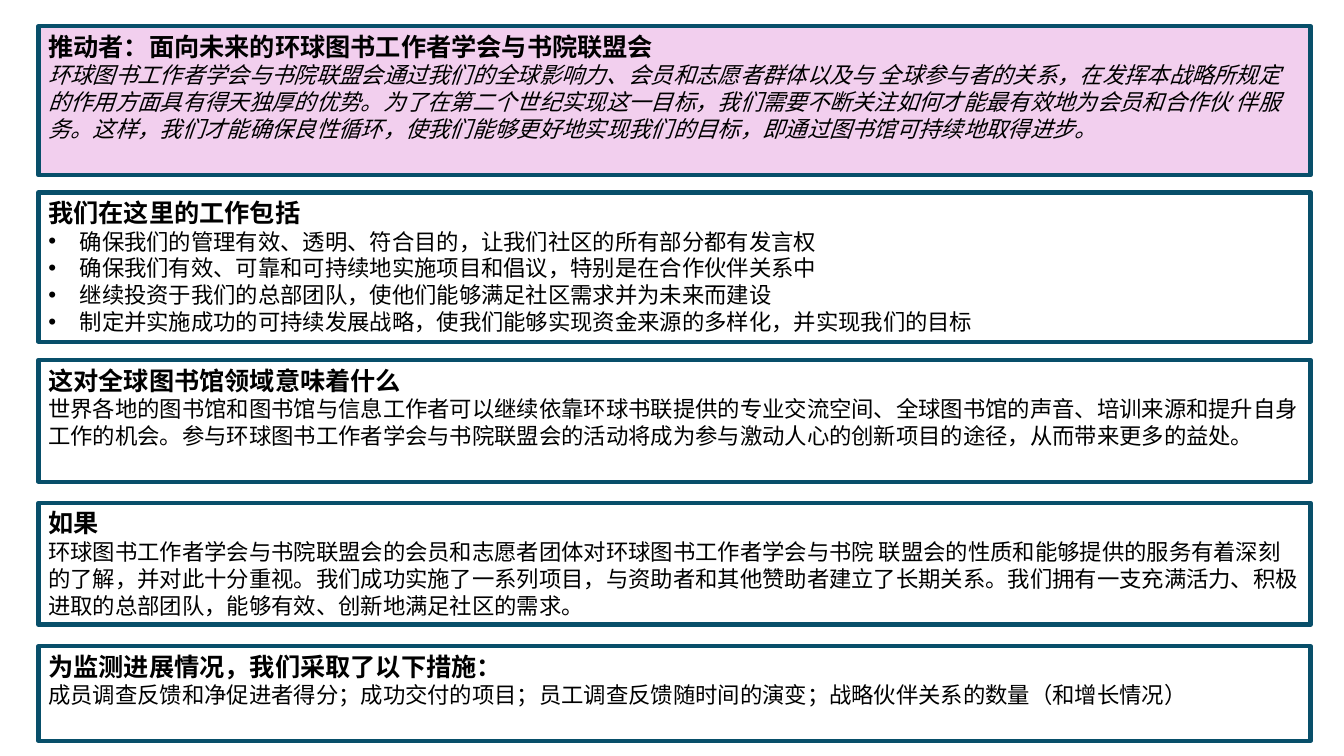
from lxml import etree
from pptx import Presentation
from pptx.dml.color import RGBColor
from pptx.enum import shapes, text
from pptx.oxml.ns import qn
from pptx.util import Cm, Pt

TEAL = RGBColor(0x08, 0x4F, 0x6A)
PINK = RGBColor(0xF2, 0xCF, 0xEE)
WHITE = RGBColor(0xFF, 0xFF, 0xFF)
BLACK = RGBColor(0x00, 0x00, 0x00)
FONT = "Roboto"
LEFT, WIDTH = Cm(0.97), Cm(32.06)
INDENT = Cm(0.79)

# top (cm), height (cm), fill, heading, body paragraphs, body format
PANELS = [
    (0.66, 3.76, PINK, "推动者：面向未来的环球图书工作者学会与书院联盟会", [
        "环球图书工作者学会与书院联盟会通过我们的全球影响力、会员和志愿者群体以及与 全球参与者的关系，"
        "在发挥本战略所规定的作用方面具有得天独厚的优势。为了在第二个世纪实现这一目标，"
        "我们需要不断关注如何才能最有效地为会员和合作伙 伴服务。这样，我们才能确保良性循环，"
        "使我们能够更好地实现我们的目标，即通过图书馆可持续地取得进步。",
    ], {"italic": True}),
    (4.85, 3.76, WHITE, "我们在这里的工作包括", [
        "确保我们的管理有效、透明、符合目的，让我们社区的所有部分都有发言权",
        "确保我们有效、可靠和可持续地实施项目和倡议，特别是在合作伙伴关系中",
        "继续投资于我们的总部团队，使他们能够满足社区需求并为未来而建设",
        "制定并实施成功的可持续发展战略，使我们能够实现资金来源的多样化，并实现我们的目标",
    ], {"bullet": True}),
    (9.07, 3.07, WHITE, "这对全球图书馆领域意味着什么", [
        "世界各地的图书馆和图书馆与信息工作者可以继续依靠环球书联提供的专业交流空间、"
        "全球图书馆的声音、培训来源和提升自身工作的机会。参与环球图书工作者学会与书院联盟会的活动"
        "将成为参与激动人心的创新项目的途径，从而带来更多的益处。",
    ], {}),
    (12.67, 3.07, WHITE, "如果", [
        "环球图书工作者学会与书院联盟会的会员和志愿者团体对环球图书工作者学会与书院 联盟会的性质"
        "和能够提供的服务有着深刻的了解，并对此十分重视。我们成功实施了一系列项目，"
        "与资助者和其他赞助者建立了长期关系。我们拥有一支充满活力、积极进取的总部团队，"
        "能够有效、创新地满足社区的需求。",
    ], {}),
    (16.28, 2.39, WHITE, "为监测进展情况，我们采取了以下措施：", [
        "成员调查反馈和净促进者得分；成功交付的项目；员工调查反馈随时间的演变；"
        "战略伙伴关系的数量（和增长情况）",
    ], {}),
]


def write(p, words, size=16, bold=False, italic=False, bullet=False):
    p.alignment = text.PP_ALIGN.LEFT
    r = p.add_run()
    r.text = words
    r.font.name = FONT
    r.font.size = Pt(size)
    r.font.bold = bold
    r.font.italic = italic
    r.font.color.rgb = BLACK
    if bullet:
        pPr = p._p.get_or_add_pPr()
        pPr.set("marL", str(INDENT))
        pPr.set("indent", str(-INDENT))
        etree.SubElement(pPr, qn("a:buFont"), typeface="Arial")
        etree.SubElement(pPr, qn("a:buChar"), char="•")


prs = Presentation()
prs.slide_width, prs.slide_height = Cm(33.87), Cm(19.05)
s = prs.slides.add_slide(prs.slide_layouts[6])

for top, height, fill, heading, body, body_format in PANELS:
    sp = s.shapes.add_shape(shapes.MSO_SHAPE.RECTANGLE, LEFT, Cm(top), WIDTH, Cm(height))
    sp.shadow.inherit = False
    sp.fill.solid()
    sp.fill.fore_color.rgb = fill
    sp.line.color.rgb = TEAL
    sp.line.width = Pt(3)
    tf = sp.text_frame
    tf.word_wrap = True
    tf.auto_size = text.MSO_AUTO_SIZE.SHAPE_TO_FIT_TEXT
    tf.vertical_anchor = text.MSO_ANCHOR.TOP
    write(tf.paragraphs[0], heading, size=18, bold=True)
    for words in body:
        write(tf.add_paragraph(), words, **body_format)

prs.save("out.pptx")
